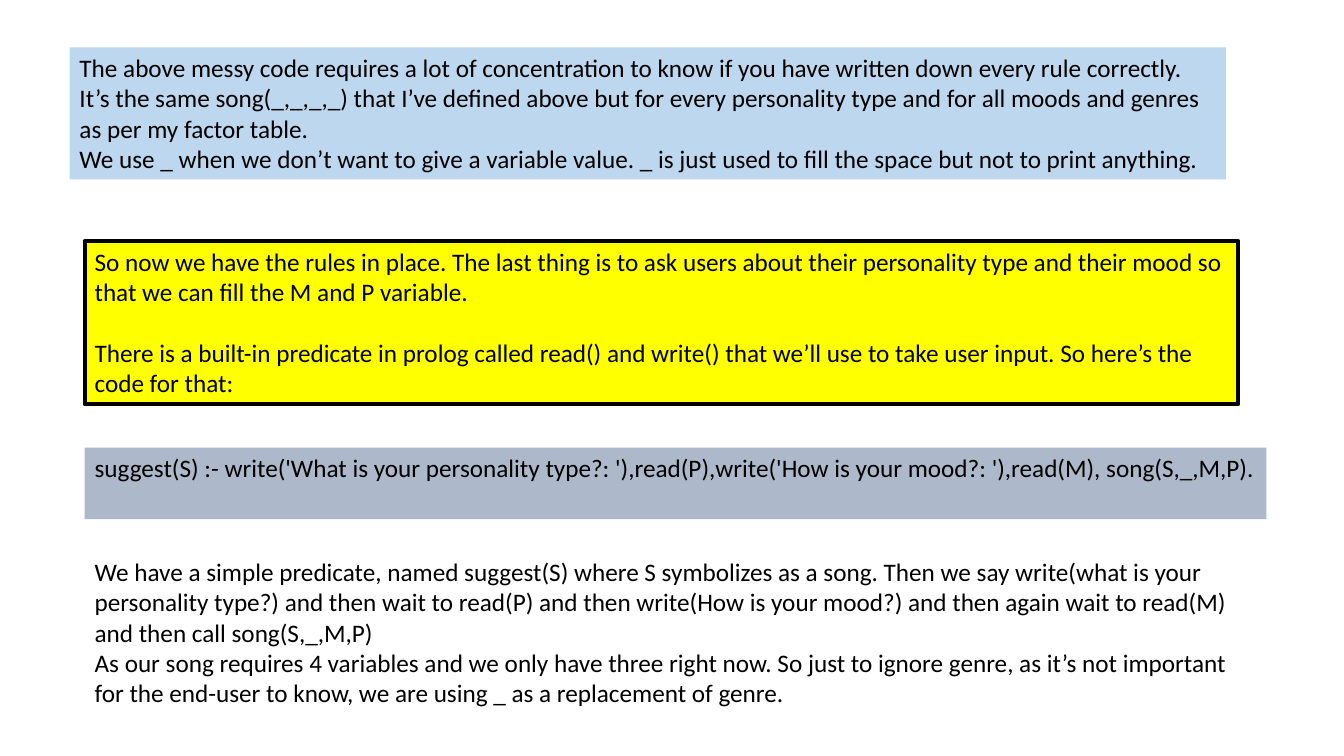
from pptx import Presentation
from pptx import util as u
from pptx.dml.color import RGBColor
from pptx.enum import shapes, text

# Content: place in px (left, top, width, height), colours, gap between paragraphs in pt
COLOURS = {"ink": "000000", "sky": "BDD7EE", "yellow": "FFFF00", "slate": "ADB9CA"}
PANELS = [
    {"at": (69, 47, 1147, 131), "fill": "sky", "paragraphs": [
        "The above messy code requires a lot of concentration to know if you have written down every rule "
        "correctly. It’s the same song(_,_,_,_) that I’ve defined above but for every personality type and "
        "for all moods and genres as per my factor table.",
        "We use _ when we don’t want to give a variable value. _ is just used to fill the space but not to "
        "print anything."]},
    {"at": (84, 239, 1144, 162), "fill": "yellow", "outline": 3, "gap": 22, "paragraphs": [
        "So now we have the rules in place. The last thing is to ask users about their personality type and "
        "their mood so that we can fill the M and P variable.",
        "There is a built-in predicate in prolog called read() and write() that we’ll use to take user "
        "input. So here’s the code for that:"]},
    {"at": (84, 444, 1172, 71), "fill": "slate", "paragraphs": [
        "suggest(S) :- write('What is your personality type?: '),read(P),"
        "write('How is your mood?: '),read(M), song(S,_,M,P)."]},
    {"at": (84, 547, 1172, 162), "paragraphs": [
        "We have a simple predicate, named suggest(S) where S symbolizes as a song. Then we say write(what "
        "is your personality type?) and then wait to read(P) and then write(How is your mood?) and then "
        "again wait to read(M) and then call song(S,_,M,P)",
        "As our song requires 4 variables and we only have three right now. So just to ignore genre, as "
        "it’s not important for the end-user to know, we are using _ as a replacement of genre."]},
]
PX = u.Inches(1) // 100


def colour(name):
    return RGBColor.from_string(COLOURS[name])


def add_panel(slide, at, paragraphs, fill=None, outline=0, gap=0):
    place = [n * PX for n in at]
    if fill:
        panel = slide.shapes.add_shape(shapes.MSO_SHAPE.RECTANGLE, *place)
        panel.shadow.inherit = False
        panel.fill.solid()
        panel.fill.fore_color.rgb = colour(fill)
        if outline:
            panel.line.color.rgb = colour("ink")
            panel.line.width = u.Pt(outline)
        else:
            panel.line.fill.background()
    else:
        panel = slide.shapes.add_textbox(*place)

    # Text
    frame = panel.text_frame
    frame.word_wrap = True
    frame.vertical_anchor = text.MSO_ANCHOR.TOP
    for i, wording in enumerate(paragraphs):
        paragraph = frame.add_paragraph() if i else frame.paragraphs[0]
        paragraph.alignment = text.PP_ALIGN.LEFT
        paragraph.space_before = u.Pt(gap if i else 0)
        run = paragraph.add_run()
        run.text = wording
        run.font.name = "Calibri"
        run.font.size = u.Pt(18)
        run.font.color.rgb = colour("ink")


def main():
    deck = Presentation()
    deck.slide_width, deck.slide_height = 1333 * PX, 750 * PX
    slide = deck.slides.add_slide(deck.slide_layouts[6])
    for panel in PANELS:
        add_panel(slide, **panel)
    deck.save("out.pptx")


if __name__ == "__main__":
    main()
